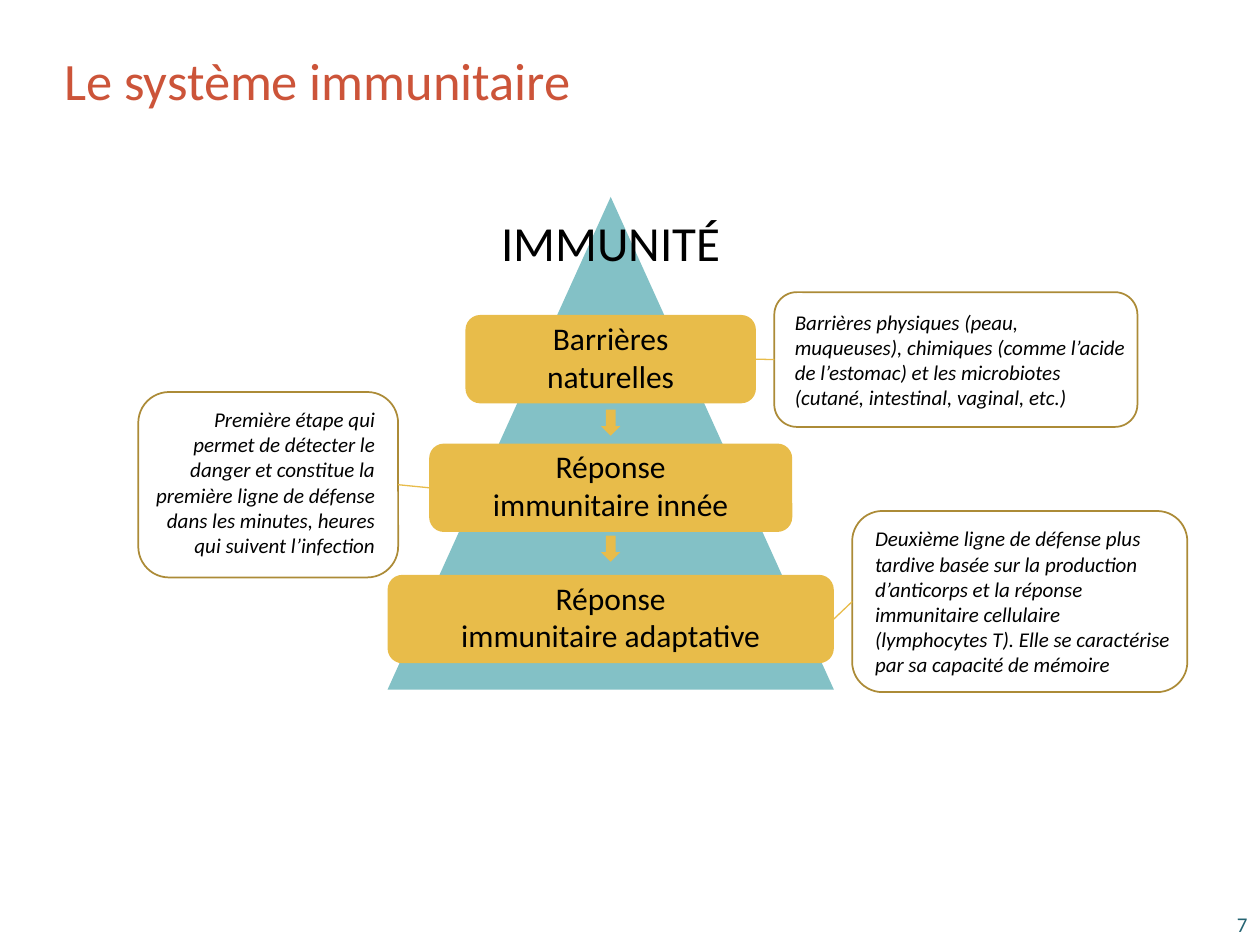
import pptx
import pptx.dml.color
import pptx.enum.shapes
import pptx.enum.text
import pptx.util
import pptx.oxml.ns
from lxml import etree

Pt = pptx.util.Pt
Kind = pptx.enum.shapes.MSO_SHAPE
Align = pptx.enum.text.PP_ALIGN
Middle = pptx.enum.text.MSO_ANCHOR.MIDDLE

AXIS = 349  # centre line of the pyramid
RIGHT, LEFT = 3, 1


def color(code):
    return pptx.dml.color.RGBColor.from_string(code)


def write(shape, text, size=18, ink="000000", align=Align.CENTER,
          italic=False, pad=(0, 0, 0, 0)):
    """Fill a shape with text; pad is left, top, right, bottom."""
    frame = shape.text_frame
    frame.word_wrap = True
    frame.vertical_anchor = Middle
    frame.margin_left, frame.margin_top, frame.margin_right, frame.margin_bottom = map(Pt, pad)
    frame.text = text
    for para in frame.paragraphs:
        para.alignment = align
        font = para.font
        font.name, font.size, font.italic = "Calibri", Pt(size), italic
        font.color.rgb = color(ink)


class Page:
    gold, edge, teal = "E8BC4A", "AC8B37", "83C1C6"
    red, blue = "CC5439", "246372"

    def __init__(self, deck):
        self.slide = deck.slides.add_slide(deck.slide_layouts[5])
        self.shapes = self.slide.shapes

    def title(self, text, x, y, w, h):
        head = self.shapes.title
        head.left, head.top, head.width, head.height = map(Pt, (x, y, w, h))
        write(head, text, size=30, ink=self.red, align=Align.LEFT, pad=(7.2, 3.6, 7.2, 3.6))

    def shape(self, kind, x, y, w, h, fill=None, line=None):
        item = self.shapes.add_shape(kind, Pt(x), Pt(y), Pt(w), Pt(h))
        item.shadow.inherit = False
        if fill:
            item.fill.solid()
            item.fill.fore_color.rgb = color(fill)
        else:
            item.fill.background()
        if line:
            item.line.color.rgb = color(line)
            item.line.width = Pt(1)
        else:
            item.line.fill.background()
        return item

    def label(self, text, x, y, w, h, **style):
        box = self.shapes.add_textbox(Pt(x), Pt(y), Pt(w), Pt(h))
        write(box, text, **style)

    def step(self, text, y, w, side):
        """Add a gold level of the pyramid, centred on its axis."""
        bar = self.shape(Kind.ROUNDED_RECTANGLE, AXIS - w / 2, y, w, 50.5, fill=self.gold)
        write(bar, text, pad=(side, 0, side, 3))
        return bar

    def arrow(self, y):
        self.shape(Kind.DOWN_ARROW, AXIS - 5.5, y, 11, 15, fill=self.gold)

    def note(self, text, x, y, w, h, align=Align.LEFT):
        card = self.shape(Kind.ROUNDED_RECTANGLE, x, y, w, h, line=self.edge)
        pad = (8, 0, 2, 0) if align == Align.LEFT else (2, 0, 8, 3)
        write(card, text, size=12, align=align, italic=True, pad=pad)
        return card

    def link(self, start, end, out, into):
        wire = self.shapes.add_connector(
            pptx.enum.shapes.MSO_CONNECTOR.STRAIGHT, 0, 0, 0, 0)
        wire.begin_connect(start, out)
        wire.end_connect(end, into)
        wire.line.color.rgb = color(self.gold)
        wire.line.width = Pt(0.75)
        etree.SubElement(wire._element.spPr, pptx.oxml.ns.qn("a:effectLst"))


def main():
    deck = pptx.Presentation()
    deck.slide_width, deck.slide_height = Pt(720), Pt(540)
    page = Page(deck)

    page.title("Le système immunitaire", 29.5, 21.5, 658, 47.5)
    page.shape(Kind.ISOSCELES_TRIANGLE, AXIS - 127.5, 112.5, 255, 281.5, fill=page.teal)
    page.label("IMMUNITÉ", AXIS - 138, 118, 276, 41, size=28)

    bars = [page.step(*row) for row in (
        ("Barrières naturelles", 180, 166, 30),
        ("Réponse\nimmunitaire innée", 253.5, 207.5, 0),
        ("Réponse\nimmunitaire adaptative", 328.5, 255, 0),
    )]
    for y in (234, 306):
        page.arrow(y)

    barrier = page.note(
        "Barrières physiques (peau, muqueuses), chimiques (comme l’acide de l’estomac) "
        "et les microbiotes (cutané, intestinal, vaginal, etc.)",
        442.5, 167, 207.5, 77)
    innate = page.note(
        "Première étape qui permet de détecter le danger et constitue la première ligne "
        "de défense dans les minutes, heures qui suivent l’infection",
        79, 224, 148.5, 106, align=Align.RIGHT)
    adapt = page.note(
        "Deuxième ligne de défense plus tardive basée sur la production d’anticorps "
        "et la réponse immunitaire cellulaire (lymphocytes T). Elle se caractérise "
        "par sa capacité de mémoire",
        487, 292, 191.5, 103.5)

    page.link(bars[0], barrier, RIGHT, LEFT)
    page.link(innate, bars[1], RIGHT, LEFT)
    page.link(bars[2], adapt, RIGHT, LEFT)

    page.label("7", 667.5, 517, 52.5, 22, size=12, ink=page.blue,
               align=Align.RIGHT, pad=(7.2, 3.6, 7.2, 3.6))
    deck.save("out.pptx")


if __name__ == "__main__":
    main()
